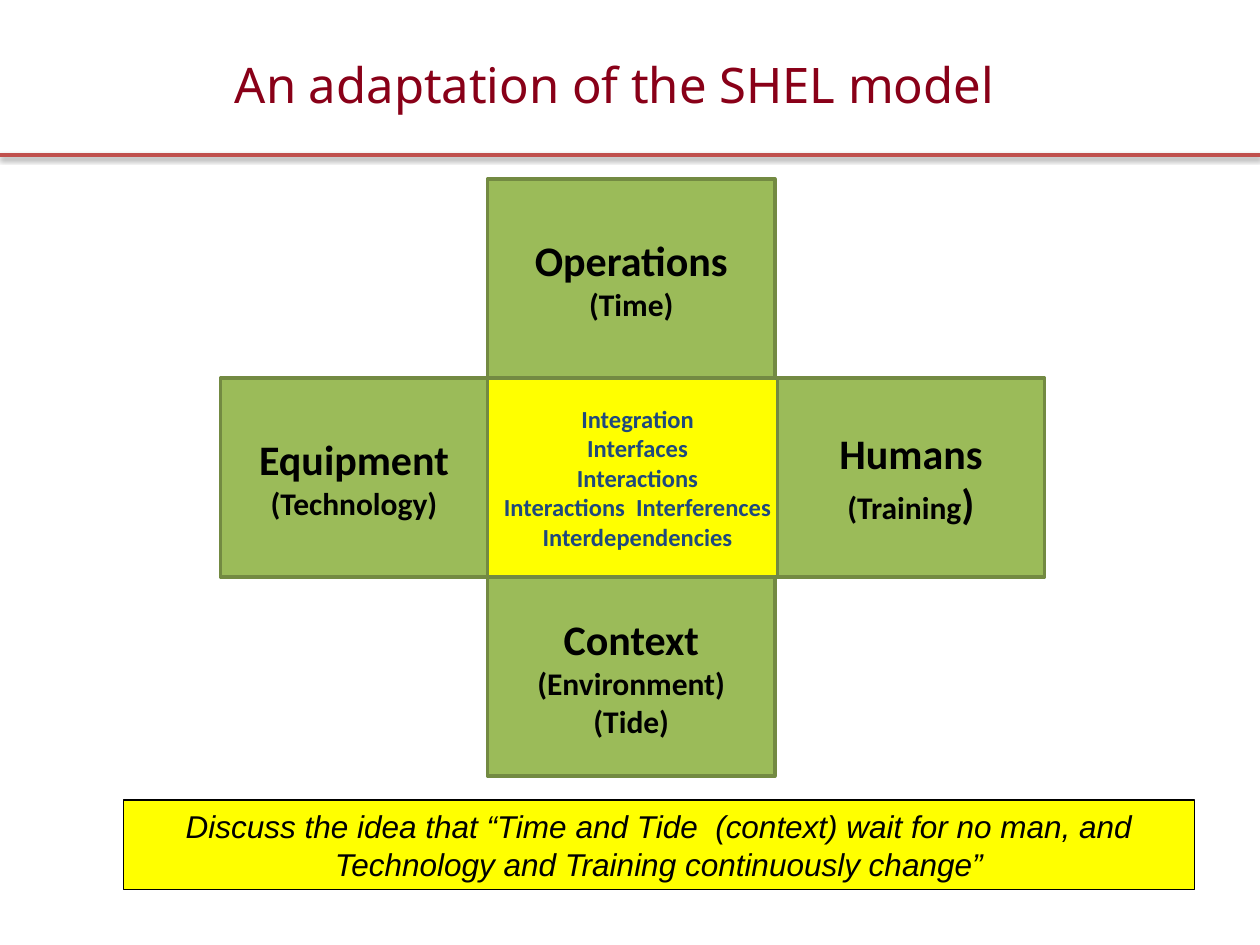
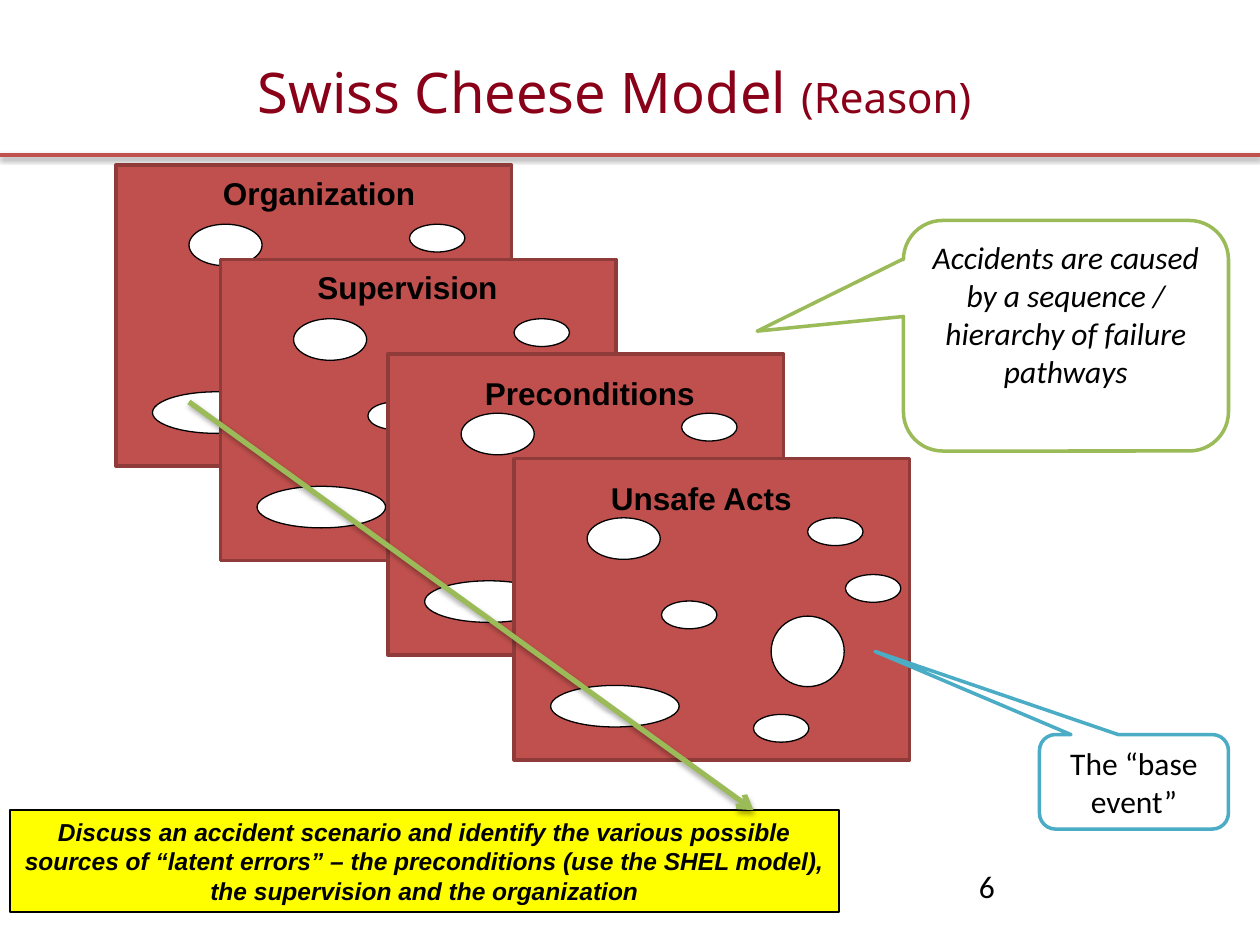
from dataclasses import dataclass
from typing import NamedTuple, Optional

from lxml import etree
from pptx import Presentation
from pptx.dml.color import RGBColor
from pptx.enum import shapes, text
from pptx.oxml import ns
from pptx.util import Emu, Pt

EMU_PER_PX = 9144


@dataclass(frozen=True)
class Theme:
    title: str = "890018"
    ink: str = "000000"
    paper: str = "FFFFFF"
    navy: str = "1F497D"
    yellow: str = "FFFF00"
    green: str = "9BBB59"
    green_edge: str = "738A42"
    blue_edge: str = "3A5F8C"
    red: str = "C0504D"
    red_edge: str = "8E3B39"
    aqua: str = "4BACC6"
    title_font: str = "Noto Sans"
    body_font: str = "Calibri"
    label_font: str = "Arial"
    title_large: float = 32
    title_medium: float = 28
    heading: float = 24
    body: float = 18
    small: float = 14


THEME = Theme()


class Frame(NamedTuple):
    left: int
    top: int
    width: int
    height: int

    def moved(self, left: int, top: int) -> "Frame":
        return Frame(self.left + left, self.top + top, self.width, self.height)


class Span(NamedTuple):
    words: str
    size: float


class Style(NamedTuple):
    font: str = THEME.body_font
    color: str = THEME.ink
    bold: bool = False
    italic: bool = False
    align: text.PP_ALIGN = text.PP_ALIGN.CENTER
    anchor: text.MSO_ANCHOR = text.MSO_ANCHOR.MIDDLE


class Look(NamedTuple):
    fill: str
    edge: str
    weight: float = 2


class Block(NamedTuple):
    frame: Frame
    look: Look
    style: Style
    paras: list[list[Span]]


class Slice(NamedTuple):
    name: str
    left: int
    top: int
    label: tuple[int, int]
    holes: list[Frame]


class Callout(NamedTuple):
    block: Block
    adjustments: tuple[float, float, float]


TITLE = Style(THEME.title_font, THEME.title, anchor=text.MSO_ANCHOR.TOP)
STRONG = Style(bold=True)
CORE = Style(color=THEME.navy, bold=True)
LABEL = Style(THEME.label_font, bold=True, align=text.PP_ALIGN.LEFT, anchor=text.MSO_ANCHOR.TOP)
NUMBER = Style(align=text.PP_ALIGN.LEFT, anchor=text.MSO_ANCHOR.TOP)
PROMPT = Style(THEME.label_font, italic=True)

GREEN = Look(THEME.green, THEME.green_edge)
RED = Look(THEME.red, THEME.red_edge)
HOLE = Look(THEME.paper, THEME.ink, 0.75)
NOTE = Look(THEME.yellow, THEME.ink, 1)


def px(length: int) -> Emu:
    return Emu(length * EMU_PER_PX)


def rgb(color: str) -> RGBColor:
    return RGBColor.from_string(color)


def write(box, paras: list[list[Span]], style: Style) -> None:
    frame = box.text_frame
    frame.word_wrap = True
    frame.auto_size = text.MSO_AUTO_SIZE.NONE
    frame.vertical_anchor = style.anchor
    for index, spans in enumerate(paras):
        para = frame.paragraphs[0] if index == 0 else frame.add_paragraph()
        para.alignment = style.align
        para.font.name = style.font
        para.font.color.rgb = rgb(style.color)
        para.font.bold = style.bold
        para.font.italic = style.italic
        para.font.size = Pt(spans[0].size)
        for span in spans:
            run = para.add_run()
            run.text = span.words
            if len(spans) > 1:
                run.font.size = Pt(span.size)


def draw_shape(page, kind: shapes.MSO_SHAPE, frame: Frame, look: Look):
    shape = page.shapes.add_shape(kind, *map(px, frame))
    shape.shadow.inherit = False
    shape.fill.solid()
    shape.fill.fore_color.rgb = rgb(look.fill)
    shape.line.color.rgb = rgb(look.edge)
    shape.line.width = Pt(look.weight)
    return shape


def draw_block(page, block: Block, kind: shapes.MSO_SHAPE = shapes.MSO_SHAPE.RECTANGLE):
    shape = draw_shape(page, kind, block.frame, block.look)
    write(shape, block.paras, block.style)
    return shape


def draw_callout(page, callout: Callout) -> None:
    shape = draw_block(page, callout.block, shapes.MSO_SHAPE.ROUNDED_RECTANGULAR_CALLOUT)
    for index, value in enumerate(callout.adjustments):
        shape.adjustments[index] = value


def draw_text(page, frame: Frame, words: str, style: Style) -> None:
    box = page.shapes.add_textbox(*map(px, frame))
    write(box, [[Span(words, THEME.body)]], style)


def draw_line(page, ends: tuple[int, int, int, int], color: str, weight: float,
              shadow_percent: int, arrow: bool = False):
    line = page.shapes.add_connector(shapes.MSO_CONNECTOR.STRAIGHT, *map(px, ends))
    line.line.color.rgb = rgb(color)
    line.line.width = Pt(weight)
    if arrow:
        etree.SubElement(line.line._get_or_add_ln(), ns.qn("a:tailEnd"), type="arrow")
    effects = etree.SubElement(line.element.spPr, ns.qn("a:effectLst"))
    shadow = etree.SubElement(effects, ns.qn("a:outerShdw"), blurRad=str(Pt(3)),
                              dist=str(Pt(1.6)), dir="5400000", rotWithShape="0")
    tone = etree.SubElement(shadow, ns.qn("a:srgbClr"), val=THEME.ink)
    etree.SubElement(tone, ns.qn("a:alpha"), val=str(shadow_percent * 1000))
    return line


def add_page(deck, layout, top: int, spans: list[Span]):
    page = deck.slides.add_slide(layout)
    title = page.shapes.title
    title.left, title.top, title.width, title.height = map(px, Frame(75, top, 825, 67))
    title.text_frame.margin_top = px(2)
    write(title, [spans], TITLE)
    return page


def build_shel(page) -> None:
    left, middle, right = 175, 387, 617
    top, row = 142, 158

    def arm(x: int, step: int, width: int, heading: str, *details: str,
            closing: Optional[Span] = None) -> Block:
        paras = [[Span(heading, THEME.heading)]]
        paras += [[Span(detail, THEME.body)] for detail in details]
        if closing:
            paras[-1].append(closing)
        return Block(Frame(x, top + step * row, width, row), GREEN, STRONG, paras)

    core = ("Integration", "Interfaces", "Interactions",
            "Interactions  Interferences", "Interdependencies")
    blocks = [
        Block(Frame(middle, top + row, 238, row), Look(THEME.yellow, THEME.blue_edge), CORE,
              [[Span(words, THEME.small)] for words in core]),
        arm(middle, 0, 228, "Operations", "(Time)"),
        arm(left, 1, 212, "Equipment", "(Technology)"),
        arm(right, 1, 212, "Humans", "(Training", closing=Span(")", THEME.heading)),
        arm(middle, 2, 228, "Context", "(Environment)", "(Tide)"),
        Block(Frame(98, 635, 850, 71), NOTE, PROMPT,
              [[Span("Discuss the idea that “Time and Tide  (context) wait for no man, and "
                     "Technology and Training continuously change”", THEME.body)]]),
    ]
    for block in blocks:
        draw_block(page, block)


def build_cheese(page) -> None:
    small = Frame(0, 0, 44, 22)
    common = [Frame(58, 47, 58, 33), Frame(29, 180, 102, 33), small.moved(233, 47)]
    centre = small.moved(117, 113)
    front = [centre, Frame(204, 125, 58, 56), small.moved(190, 203), small.moved(263, 92)]
    slices = [
        Slice("Organization", 92, 131, (75, 2), common),
        Slice("Supervision", 175, 206, (67, 2), common + [centre]),
        Slice("Preconditions", 308, 281, (67, 11), common),
        Slice("Unsafe Acts", 408, 364, (67, 11), common + front),
    ]
    for cheese in slices:
        corner = (cheese.left, cheese.top)
        draw_shape(page, shapes.MSO_SHAPE.RECTANGLE, Frame(*corner, 314, 239), RED)
        for hole in cheese.holes:
            draw_shape(page, shapes.MSO_SHAPE.OVAL, hole.moved(*corner), HOLE)
        draw_text(page, Frame(*cheese.label, 208, 40).moved(*corner), cheese.name, LABEL)

    callouts = [
        Callout(Block(Frame(717, 175, 258, 183), Look(THEME.paper, THEME.green),
                      Style(italic=True, anchor=text.MSO_ANCHOR.TOP),
                      [[Span("Accidents are caused by a sequence / hierarchy of failure pathways",
                             THEME.body)]]),
                (-0.95, -0.02, 0.17)),
        Callout(Block(Frame(825, 583, 150, 75), Look(THEME.paper, THEME.aqua), Style(),
                      [[Span("The “base event”", THEME.body)]]),
                (-1.37, -1.38, 0.17)),
    ]
    for callout in callouts:
        draw_callout(page, callout)

    draw_block(page, Block(
        Frame(8, 643, 658, 81), NOTE, PROMPT._replace(bold=True),
        [[Span("Discuss an accident scenario and identify the various possible sources of "
               "“latent errors” – the preconditions (use the SHEL model), the supervision "
               "and the organization", THEME.small)]]))
    draw_line(page, (150, 319, 598, 643), THEME.green, 3, 35, arrow=True)
    draw_text(page, Frame(767, 683, 233, 52), "6", NUMBER)


def main() -> None:
    deck = Presentation()
    deck.slide_width, deck.slide_height = px(1000), px(750)
    layout = deck.slide_layouts.get_by_name("Title Only")

    shel = add_page(deck, layout, 41,
                    [Span("An adaptation of the SHEL model", THEME.title_medium)])
    rule = draw_line(shel, (0, 123, 1000, 123), THEME.red, 2, 38)
    layout.shapes.element.append(rule.element)
    build_shel(shel)

    cheese = add_page(deck, layout, 44, [Span("Swiss Cheese Model ", THEME.title_large),
                                         Span("(Reason)", THEME.heading)])
    build_cheese(cheese)
    deck.save("out.pptx")


if __name__ == "__main__":
    main()
